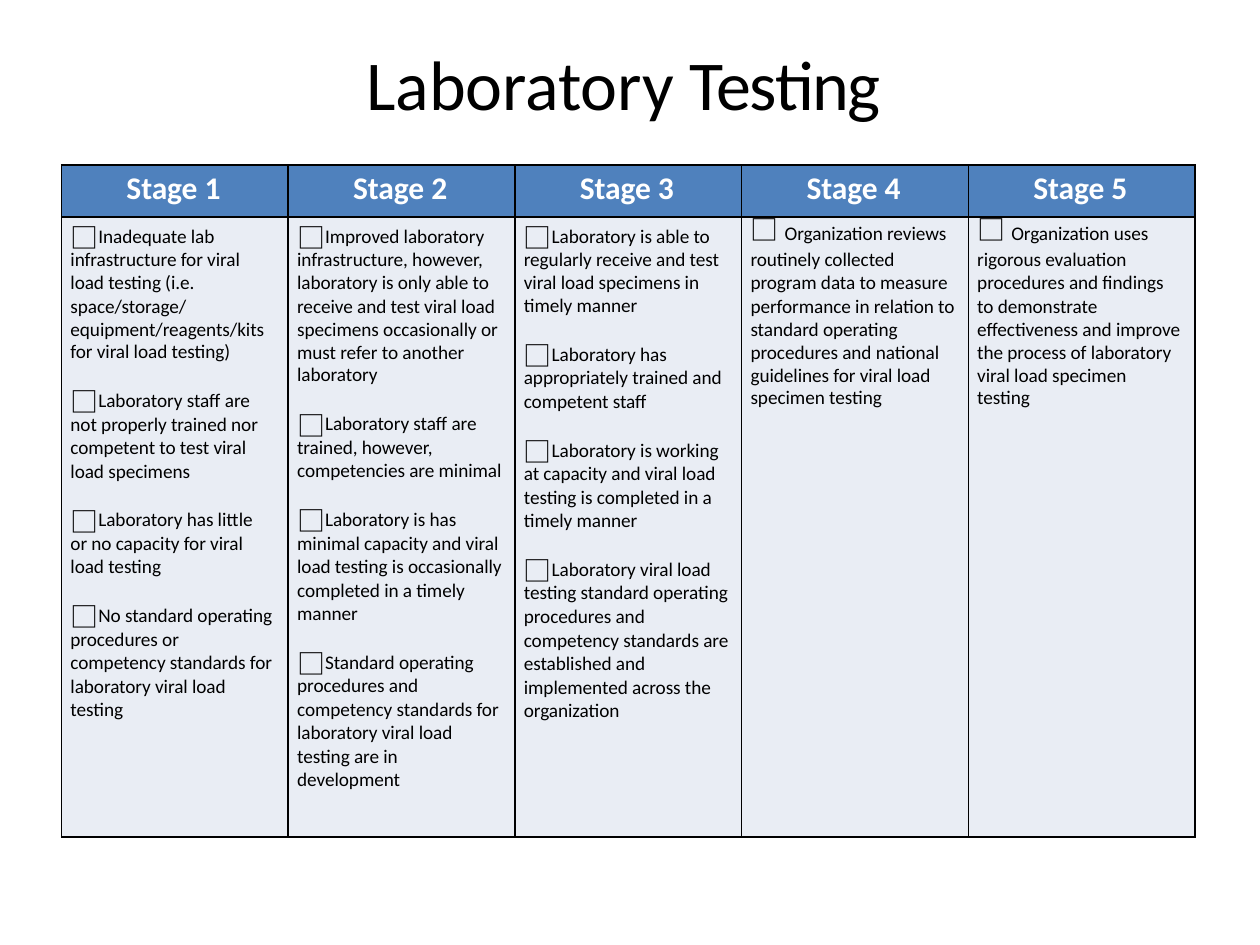
from pptx import Presentation
from pptx.dml.color import RGBColor
from pptx.enum.text import MSO_ANCHOR, PP_ALIGN
from pptx.oxml.ns import qn
from pptx.util import Cm, Pt
from lxml.etree import SubElement

COLORS = {"ink": "000000", "header": "4F81BD", "header_text": "FFFFFF", "panel": "E9EDF4"}
SYMBOL_FONT = "Noto Sans CJK JP"

SPACING = {
    "lead": {"line_spacing": Pt(18.2)},
    "body": {"line_spacing": Pt(13.2), "space_before": Pt(0.2)},
    "tail": {"line_spacing": Pt(12.9)},
    "item": {"line_spacing": 0.99, "space_before": Pt(14.4)},
    "header": {"space_before": Pt(1.9)},
}
FONTS = {
    "title": {"name": "Calibri", "size": Pt(40), "bold": False},
    "header": {"name": "Calibri", "size": Pt(18), "bold": True},
    "text": {"name": "Calibri", "size": Pt(11), "bold": False},
    "box": {"name": SYMBOL_FONT, "size": Pt(16), "bold": False},
}

STAGES = [
    [
        ("lead", "Inadequate lab", 0.2),
        ("body", "infrastructure for viral load testing (i.e. space/storage/ equipment/reagents/kits", 0.38),
        ("tail", "for viral load testing)", 0.2),
        ("item", "Laboratory staff are not properly trained nor competent to test viral load specimens", 0.52),
        ("item", "Laboratory has little or no capacity for viral load testing", 0.7),
        ("item", "No standard operating procedures or competency standards for laboratory viral load testing", 0.2),
    ],
    [
        ("lead", "Improved laboratory", 0.2),
        ("body", "infrastructure, however, laboratory is only able to receive and test viral load "
                 "specimens occasionally or must refer to another", 0.2),
        ("tail", "laboratory", 0.2),
        ("item", "Laboratory staff are trained, however, competencies are minimal", 0.2),
        ("item", "Laboratory is has minimal capacity and viral load testing is occasionally "
                 "completed in a timely manner", 0.2),
        ("item", "Standard operating procedures and competency standards for laboratory viral load "
                 "testing are in development", 0.25),
    ],
    [
        ("lead", "Laboratory is able to", 0.2),
        ("body", "regularly receive and test viral load specimens in", 0.2),
        ("tail", "timely manner", 0.2),
        ("item", "Laboratory has appropriately trained and competent staff", 0.2),
        ("item", "Laboratory is working at capacity and viral load testing is completed in a timely manner", 0.4),
        ("item", "Laboratory viral load testing standard operating procedures and competency standards are "
                 "established and implemented across the organization", 0.2),
    ],
    [
        ("lead", "□ Organization reviews", 0.2),
        ("body", "routinely collected program data to measure performance in relation to "
                 "standard operating procedures and national guidelines for viral load", 0.2),
        ("tail", "specimen testing", 0.2),
    ],
    [
        ("lead", "□ Organization uses", 0.2),
        ("body", "rigorous evaluation procedures and findings to demonstrate effectiveness and improve "
                 "the process of laboratory viral load specimen", 0.25),
        ("tail", "testing", 0.2),
    ],
]


def add_text(paragraph, text, font, color, tracking=-5):
    run = paragraph.add_run()
    run.text = text
    for attribute, value in FONTS[font].items():
        setattr(run.font, attribute, value)
    run.font.color.rgb = RGBColor.from_string(COLORS[color])
    run.font._element.set("spc", str(tracking))


def space_paragraph(paragraph, kind, left, right=0):
    for attribute, value in SPACING[kind].items():
        setattr(paragraph, attribute, value)
    properties = paragraph._p.get_or_add_pPr()
    for attribute, value in {"marL": Cm(left), "marR": Cm(right), "indent": 0}.items():
        properties.set(attribute, str(int(value)))
    return properties


presentation = Presentation()
presentation.slide_width, presentation.slide_height = Cm(25.4), Cm(19.05)
slide = presentation.slides.add_slide(presentation.slide_layouts[5])

title = slide.shapes.title
title.left, title.top, title.width, title.height = Cm(7.39), Cm(0.76), Cm(10.62), Cm(1.8)
title_format = {"margin_left": 0, "margin_top": 0, "margin_right": 0, "margin_bottom": 0,
                "vertical_anchor": MSO_ANCHOR.MIDDLE, "word_wrap": True}
for attribute, value in title_format.items():
    setattr(title.text_frame, attribute, value)
heading = title.text_frame.paragraphs[0]
heading.alignment = PP_ALIGN.LEFT
add_text(heading, "Laboratory ", "title", "ink")
add_text(heading, "Testing", "title", "ink", -70)

stages = slide.shapes.add_table(2, len(STAGES), Cm(1.24), Cm(3.33), Cm(22.85), Cm(13.54)).table
stages.first_row = stages.horz_banding = False
stages.rows[0].height, stages.rows[1].height = Cm(1.04), Cm(12.5)
for column in stages.columns:
    column.width = Cm(4.57)

for cell in stages.iter_cells():
    for side in ("left", "top", "right", "bottom"):
        setattr(cell, f"margin_{side}", 0)
    for edge in ("lnL", "lnR", "lnT", "lnB"):
        border = SubElement(cell._tc.get_or_add_tcPr(), qn(f"a:{edge}"), w=str(Pt(1)))
        SubElement(SubElement(border, qn("a:solidFill")), qn("a:srgbClr"), val=COLORS["ink"])
    cell.fill.solid()

for index, criteria in enumerate(STAGES):
    header, panel = stages.cell(0, index), stages.cell(1, index)
    header.fill.fore_color.rgb = RGBColor.from_string(COLORS["header"])
    panel.fill.fore_color.rgb = RGBColor.from_string(COLORS["panel"])
    header.margin_top = Cm(0.08)
    label = header.text_frame.paragraphs[0]
    space_paragraph(label, "header", 1.31)
    add_text(label, f"Stage {index + 1}", "header", "header_text")

    for position, (kind, text, right) in enumerate(criteria):
        criterion = panel.text_frame.add_paragraph() if position else panel.text_frame.paragraphs[0]
        properties = space_paragraph(criterion, kind, 0.18, right)
        if text.startswith("□"):
            add_text(criterion, "□ ", "box", "ink")
            text = text.removeprefix("□ ")
        elif kind in ("lead", "item"):
            SubElement(properties, qn("a:buSzPct"), val="145000")
            SubElement(properties, qn("a:buFont"), typeface=SYMBOL_FONT)
            SubElement(properties, qn("a:buChar"), char="□")
            tabs = SubElement(properties, qn("a:tabLst"))
            SubElement(tabs, qn("a:tab"), pos=str(Cm(0.89)), algn="l")
        add_text(criterion, text, "text", "ink")

presentation.save("out.pptx")
